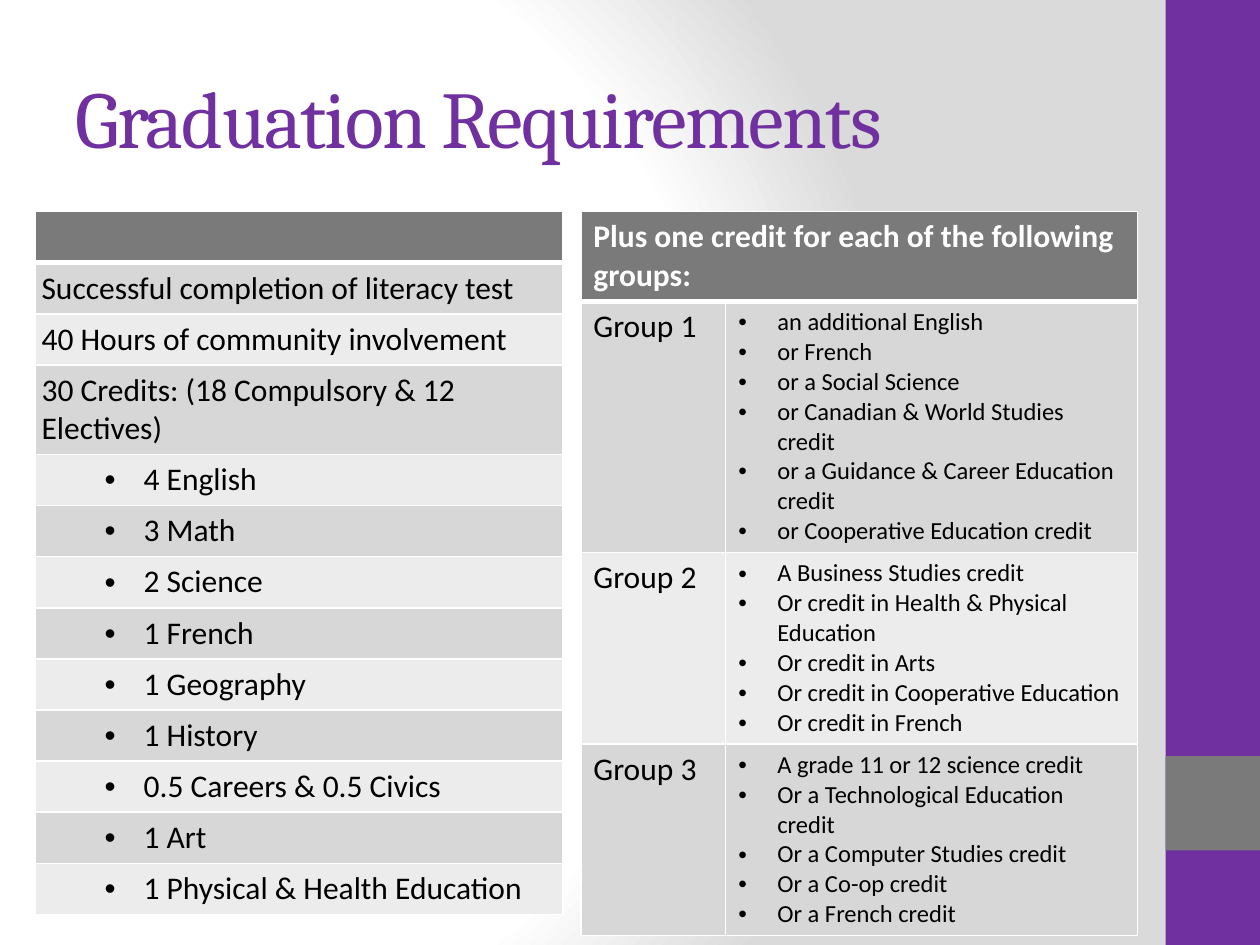
"""Build the Graduation Requirements slide."""
from lxml.etree import SubElement
from pptx import Presentation
from pptx.dml.color import RGBColor
from pptx.enum.shapes import MSO_SHAPE
from pptx.enum.text import MSO_ANCHOR, PP_ALIGN
from pptx.oxml import parse_xml
from pptx.oxml.ns import nsdecls, qn
from pptx.util import Inches, Pt

PURPLE = RGBColor(0x70, 0x30, 0xA0)
GRAY = RGBColor(0x7A, 0x7A, 0x7A)
DARK_BAND = RGBColor(0xD7, 0xD7, 0xD7)
LIGHT_BAND = RGBColor(0xEC, 0xEC, 0xEC)
WHITE = RGBColor(0xFF, 0xFF, 0xFF)
BLACK = RGBColor(0, 0, 0)
SILVER = RGBColor(0xDA, 0xDA, 0xDA)
COLS, ROWS = 40, 30
TOP, ROW_H = 6.72, 1.62

REQUIREMENTS = [
    "Successful completion of literacy test",
    "40 Hours of community involvement",
    "30 Credits: (18 Compulsory & 12 Electives)",
]
COMPULSORY = [
    "4 English", "3 Math", "2 Science", "1 French", "1 Geography", "1 History",
    "0.5 Careers & 0.5 Civics", "1 Art", "1 Physical & Health Education",
]
GROUPS = {
    "Group 1": [
        "an additional English", "or French", "or a Social Science",
        "or Canadian & World Studies credit",
        "or a Guidance & Career Education credit",
        "or Cooperative Education credit",
    ],
    "Group 2": [
        "A Business Studies credit",
        "Or credit in Health & Physical Education",
        "Or credit in Arts",
        "Or credit in Cooperative Education",
        "Or credit in French",
    ],
    "Group 3": [
        "A grade 11 or 12 science credit",
        "Or a Technological Education credit",
        "Or a Computer Studies credit",
        "Or a Co-op credit",
        "Or a French credit",
    ],
}


def write(p, text, size=18, color=BLACK, font="Calibri", bold=False, indent=None, spacing=None):
    """Put formatted text in a paragraph, bulleted when an indent is given."""
    r = p.add_run()
    r.text = text
    r.font.size, r.font.name, r.font.bold = Pt(size), font, bold
    r.font.color.rgb = color
    if spacing is not None:
        r.font._element.set("spc", str(spacing * 100))
    if indent is not None:
        pPr = p._p.get_or_add_pPr()
        pPr.set("marL", str(Inches(indent)))
        pPr.set("indent", str(-Inches(0.31)))
        SubElement(pPr, qn("a:buFont")).set("typeface", "Arial")
        SubElement(pPr, qn("a:buChar")).set("char", "•")


class Deck:
    """Holds the grid, the style and the current slide."""

    def __init__(self, prs):
        self.slide = prs.slides.add_slide(prs.slide_layouts[5])
        self.dx, self.dy = prs.slide_width / COLS, prs.slide_height / ROWS

    def box(self, x, y, w, h):
        """Turn grid columns and rows into lengths."""
        return int(x * self.dx), int(y * self.dy), int(w * self.dx), int(h * self.dy)

    def background(self, inner, outer):
        """Fill the background with a circular gradient."""
        stops = "".join(
            f'<a:gs pos="{pos * 1000}"><a:srgbClr val="{color}"/></a:gs>'
            for pos, color in ((0, inner), (75, inner), (100, outer)))
        self.slide._element.cSld.insert(0, parse_xml(
            f'<p:bg {nsdecls("p", "a")}><p:bgPr><a:gradFill rotWithShape="1">'
            f'<a:gsLst>{stops}</a:gsLst><a:path path="circle">'
            '<a:fillToRect l="20000" t="50000" r="100000" b="50000"/></a:path>'
            '</a:gradFill><a:effectLst/></p:bgPr></p:bg>'))

    def title(self, text, x, y, w, h):
        """Place and format the title placeholder."""
        sp = self.slide.shapes.title
        sp.left, sp.top, sp.width, sp.height = self.box(x, y, w, h)
        tf = sp.text_frame
        tf.word_wrap, tf.vertical_anchor = True, MSO_ANCHOR.MIDDLE
        tf.paragraphs[0].alignment = PP_ALIGN.LEFT
        write(tf.paragraphs[0], text, size=46, color=PURPLE, font="Cambria", spacing=-1)

    def rect(self, x, y, w, h, color):
        """Add a plain rectangle."""
        sp = self.slide.shapes.add_shape(MSO_SHAPE.RECTANGLE, *self.box(x, y, w, h))
        sp.shadow.inherit = False
        sp.fill.solid()
        sp.fill.fore_color.rgb = color
        sp.line.fill.background()

    def table(self, x, y, widths, n_rows):
        """Add a banded table with a header row and white borders."""
        frame = self.slide.shapes.add_table(
            n_rows, len(widths), *self.box(x, y, sum(widths), n_rows * ROW_H))
        tbl = frame.table
        for col, width in zip(tbl.columns, widths):
            col.width = int(width * self.dx)
        for i, row in enumerate(tbl.rows):
            row.height = int(ROW_H * self.dy)
            fill = GRAY if i == 0 else DARK_BAND if i % 2 else LIGHT_BAND
            for cell in row.cells:
                cell.fill.solid()
                cell.fill.fore_color.rgb = fill
                self.borders(cell, top=3 if i == 1 else 1, bottom=3 if i == 0 else 1)
        return tbl

    def borders(self, cell, top, bottom):
        """Draw the four white borders of a cell."""
        tcPr = cell._tc.get_or_add_tcPr()
        for i, (side, width) in enumerate(zip("LRTB", (1, 1, top, bottom))):
            tcPr.insert(i, parse_xml(
                f'<a:ln{side} {nsdecls("a")} w="{Pt(width)}"><a:solidFill>'
                f'<a:srgbClr val="{WHITE}"/></a:solidFill></a:ln{side}>'))

    def cell(self, cell, lines, inset=None, **fmt):
        """Write one paragraph per line in a cell."""
        if inset is not None:
            cell.margin_left = cell.margin_right = Inches(inset)
            cell.margin_top = cell.margin_bottom = Inches(inset)
        tf = cell.text_frame
        for i, line in enumerate(lines):
            p = tf.add_paragraph() if i else tf.paragraphs[0]
            write(p, line, **fmt)


def main():
    """Build and save the slide."""
    prs = Presentation()
    prs.slide_width, prs.slide_height = Inches(10), Inches(7.5)
    deck = Deck(prs)
    deck.background(WHITE, SILVER)
    deck.rect(37, 0, 3, ROWS, PURPLE)
    deck.rect(37, 24, 3, 3, GRAY)
    deck.title("Graduation Requirements", 2, 1.2, 33.32, 5)

    items = REQUIREMENTS + COMPULSORY
    tbl = deck.table(1.12, TOP, [16.76], len(items) + 1)
    for i, item in enumerate(items, 1):
        indent = 0.81 if item in COMPULSORY else None
        deck.cell(tbl.cell(i, 0), [item], inset=0.05, indent=indent)

    tbl = deck.table(18.44, TOP, [4.6, 13.08], len(GROUPS) + 1)
    tbl.cell(0, 0).merge(tbl.cell(0, 1))
    deck.cell(tbl.cell(0, 0), ["Plus one credit for each of the following groups:"],
              color=WHITE, bold=True)
    for i, (group, credits) in enumerate(GROUPS.items(), 1):
        deck.cell(tbl.cell(i, 0), [group])
        deck.cell(tbl.cell(i, 1), credits, size=14, indent=0.31)
    prs.save("out.pptx")


if __name__ == "__main__":
    main()
